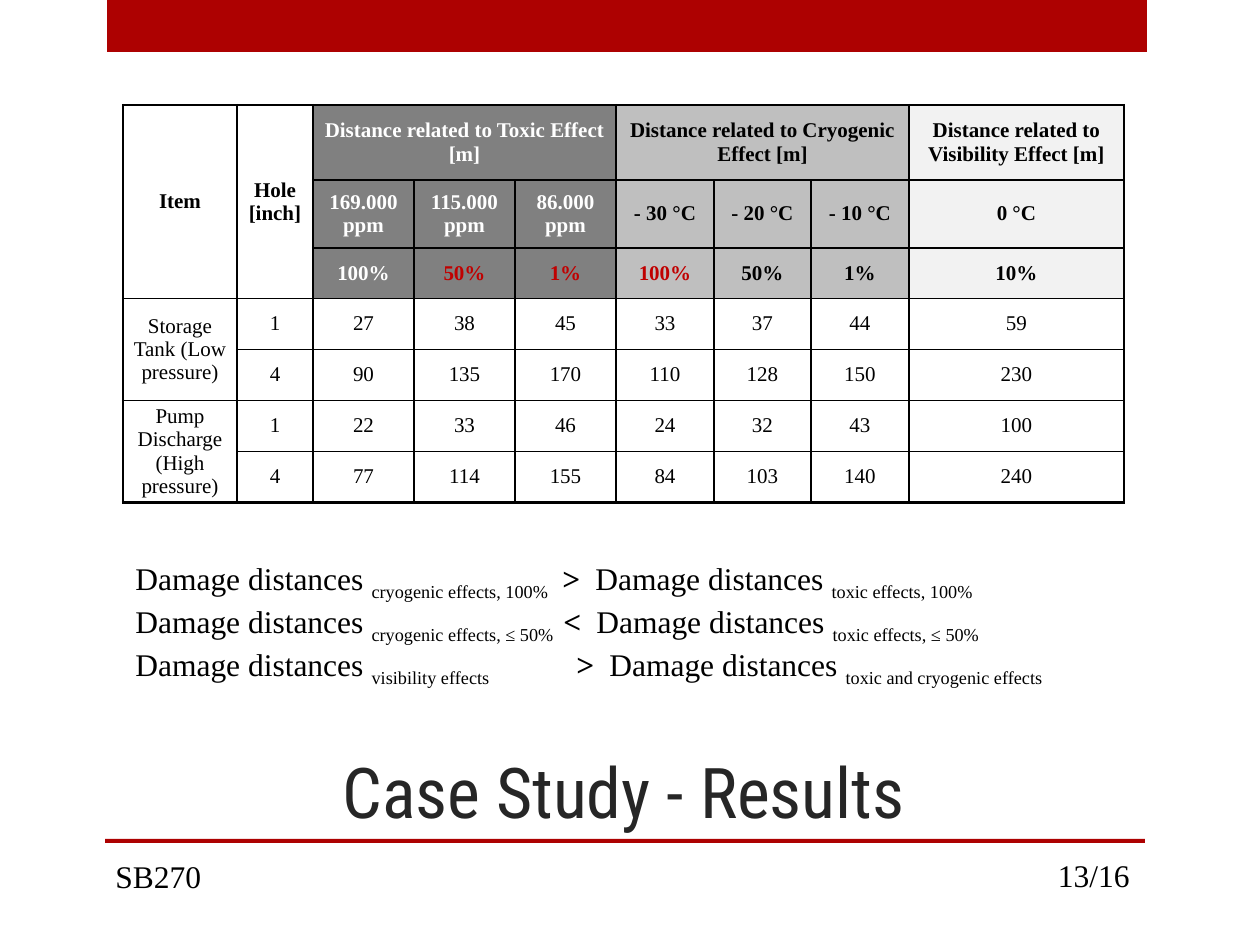
from lxml import etree
from pptx import Presentation
from pptx.dml.color import RGBColor
from pptx.enum import shapes, text
from pptx.oxml import ns
from pptx.util import Pt

BLACK = RGBColor(0x00, 0x00, 0x00)
WHITE = RGBColor(0xFF, 0xFF, 0xFF)
BRAND_RED = RGBColor(0xAD, 0x01, 0x01)
MARK_RED = RGBColor(0xC0, 0x00, 0x00)
TITLE_GRAY = RGBColor(0x26, 0x26, 0x26)
DARK_GRAY = RGBColor(0x80, 0x80, 0x80)
MID_GRAY = RGBColor(0xBF, 0xBF, 0xBF)
PALE_GRAY = RGBColor(0xF2, 0xF2, 0xF2)

SERIF, TITLE_FONT = "Times New Roman", "Roboto Condensed"
PX = 914400 / 126
LEFT, CENTER, RIGHT = text.PP_ALIGN.LEFT, text.PP_ALIGN.CENTER, text.PP_ALIGN.RIGHT

# Results table: None marks a cell covered by a merged one
COLUMNS = [114, 76, 101, 101, 101, 98, 97, 98, 215]
ROWS = [75, 68, 47, 51, 51, 51, 51]
HEADER_ROWS = 3
CELLS = [
    ["Item", "Hole\n[inch]", "Distance related to Toxic Effect [m]", None, None,
     "Distance related to Cryogenic Effect [m]", None, None,
     "Distance related to Visibility Effect [m]"],
    [None, None, "169.000 ppm", "115.000 ppm", "86.000 ppm",
     "- 30 °C", "- 20 °C", "- 10 °C", "0 °C"],
    [None, None, "100%", "50%", "1%", "100%", "50%", "1%", "10%"],
    ["Storage Tank (Low pressure)", "1", "27", "38", "45", "33", "37", "44", "59"],
    [None, "4", "90", "135", "170", "110", "128", "150", "230"],
    ["Pump Discharge (High pressure)", "1", "22", "33", "46", "24", "32", "43", "100"],
    [None, "4", "77", "114", "155", "84", "103", "140", "240"],
]
# (row, column): (rows spanned, columns spanned)
SPANS = {(0, 0): (3, 1), (0, 1): (3, 1), (0, 2): (1, 3), (0, 5): (1, 3),
         (3, 0): (2, 1), (5, 0): (2, 1)}
HEADER_FILLS = [None] * 2 + [DARK_GRAY] * 3 + [MID_GRAY] * 3 + [PALE_GRAY]
MARKED = {(2, 3), (2, 4), (2, 5)}
HEAVY_COLUMN_EDGES = {0, 2, 5, 8, 9}
HEAVY_ROW_EDGES = {0, 7}

# Comparisons: left subscript, sign, right subscript, tab stops in px
COMPARISONS = [
    ("cryogenic effects, 100%", ">", "toxic effects, 100%", (427, 460)),
    ("cryogenic effects, ≤ 50%", "<", "toxic effects, ≤ 50%", (428, 461)),
    ("visibility effects", ">", "toxic and cryogenic effects", (441, 474)),
]


def emu(px):
    return round(px * PX)


class SlideBuilder:
    def __init__(self, slide, font=SERIF):
        self.s = slide
        self.font = font

    def run(self, p, words, size, color=BLACK, bold=False, font=None, base=0):
        r = p.add_run()
        r.text = words
        r.font.name = font or self.font
        r.font.size = Pt(size)
        r.font.bold = bold
        r.font.color.rgb = color
        if base:
            r.font._element.set("baseline", str(base * 1000))

    def bar(self, x, y, w, h):
        sp = self.s.shapes.add_shape(shapes.MSO_SHAPE.RECTANGLE, *map(emu, (x, y, w, h)))
        sp.shadow.inherit = False
        sp.fill.solid()
        sp.fill.fore_color.rgb = BRAND_RED
        sp.line.fill.background()

    def box(self, x, y, w, h, anchor=text.MSO_ANCHOR.TOP):
        tf = self.s.shapes.add_textbox(*map(emu, (x, y, w, h))).text_frame
        tf.word_wrap = True
        tf.vertical_anchor = anchor
        return tf

    def label(self, x, y, w, h, words, size=18, align=LEFT,
              anchor=text.MSO_ANCHOR.TOP, **style):
        p = self.box(x, y, w, h, anchor).paragraphs[0]
        p.alignment = align
        self.run(p, words, size, **style)

    def comparisons(self, x, y, w, h, items):
        tf = self.box(x, y, w, h)
        for i, (left, sign, right, stops) in enumerate(items):
            p = tf.add_paragraph() if i else tf.paragraphs[0]
            tabs = etree.SubElement(p._p.get_or_add_pPr(), ns.qn("a:tabLst"))
            for stop in stops:
                etree.SubElement(tabs, ns.qn("a:tab"), pos=str(emu(stop)), algn="l")
            self.run(p, "Damage distances ", 18)
            self.run(p, left, 18, base=-25)
            self.run(p, "\t" + sign, 18, bold=True)
            self.run(p, "\tDamage distances ", 18)
            self.run(p, right, 18, base=-25)

    def borders(self, cell, row, col, rows, cols):
        heavy = {"L": col in HEAVY_COLUMN_EDGES, "R": col + cols in HEAVY_COLUMN_EDGES,
                 "T": row in HEAVY_ROW_EDGES, "B": row + rows in HEAVY_ROW_EDGES}
        tc_pr = cell._tc.get_or_add_tcPr()
        for side, is_heavy in heavy.items():
            ln = etree.SubElement(tc_pr, ns.qn("a:ln" + side),
                                  w=str(Pt(1.5 if is_heavy else 1)))
            fill = etree.SubElement(ln, ns.qn("a:solidFill"))
            etree.SubElement(fill, ns.qn("a:srgbClr"), val=str(BLACK))

    def cell(self, cell, words, color, bold, fill):
        cell.margin_left = cell.margin_right = emu(9)
        cell.margin_top = cell.margin_bottom = 0
        cell.vertical_anchor = text.MSO_ANCHOR.MIDDLE
        if fill is None:
            cell.fill.background()
        else:
            cell.fill.solid()
            cell.fill.fore_color.rgb = fill
        for i, line in enumerate(words.split("\n")):
            tf = cell.text_frame
            p = tf.add_paragraph() if i else tf.paragraphs[0]
            p.alignment = CENTER
            self.run(p, line, 12, color, bold)

    def table(self, x, y):
        size = (x, y, sum(COLUMNS), sum(ROWS))
        tbl = self.s.shapes.add_table(len(ROWS), len(COLUMNS), *map(emu, size)).table
        tbl.first_row = tbl.horz_banding = False
        for column, w in zip(tbl.columns, COLUMNS):
            column.width = emu(w)
        for row, h in zip(tbl.rows, ROWS):
            row.height = emu(h)
        for r, line in enumerate(CELLS):
            for c, words in enumerate(line):
                if words is None:
                    continue
                rows, cols = SPANS.get((r, c), (1, 1))
                cell = tbl.cell(r, c)
                if (r, c) in SPANS:
                    cell.merge(tbl.cell(r + rows - 1, c + cols - 1))
                header = r < HEADER_ROWS
                fill = HEADER_FILLS[c] if header else None
                color = WHITE if fill == DARK_GRAY else BLACK
                if (r, c) in MARKED:
                    color = MARK_RED
                self.borders(cell, r, c, rows, cols)
                self.cell(cell, words, color, header, fill)


def main():
    prs = Presentation()
    prs.slide_width, prs.slide_height = emu(1260), emu(945)
    s = SlideBuilder(prs.slides.add_slide(prs.slide_layouts[6]))

    # Frame and footer
    s.bar(107, 0, 1040, 52)
    s.bar(105, 839, 1040, 4)
    s.label(103, 851, 117, 50, "SB270")
    s.label(1003, 850, 139, 50, "13/16", align=RIGHT)

    # Findings
    s.comparisons(123, 553, 1000, 127, COMPARISONS)

    # Title
    s.label(105, 630, 1037, 209, "Case Study - Results", 40, CENTER,
            text.MSO_ANCHOR.BOTTOM, color=TITLE_GRAY, font=TITLE_FONT)

    # Distances by effect
    s.table(123, 105)

    prs.save("out.pptx")


if __name__ == "__main__":
    main()
